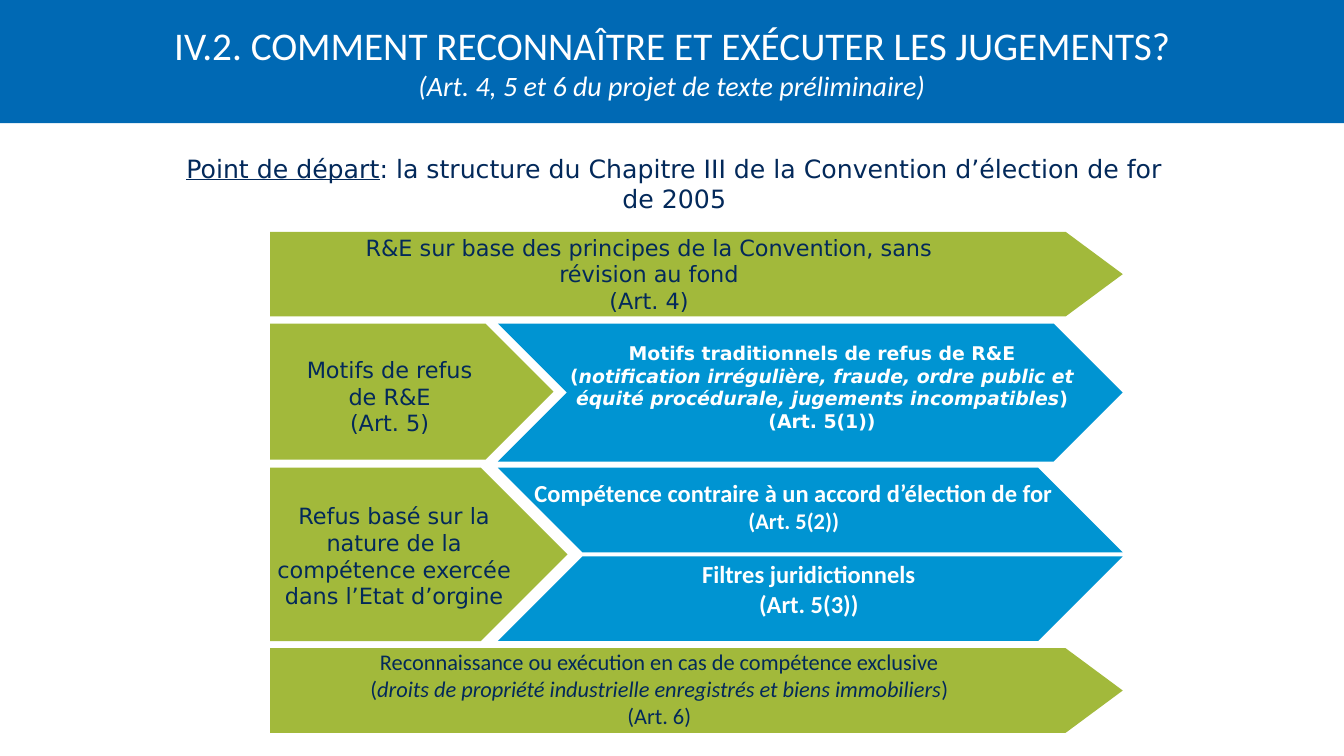
from pptx import Presentation
from pptx.dml.color import RGBColor
from pptx.enum.shapes import MSO_SHAPE
from pptx.enum.text import MSO_ANCHOR, MSO_AUTO_SIZE, PP_ALIGN
from pptx.util import Pt

PENTAGON = MSO_SHAPE.PENTAGON
CHEVRON = MSO_SHAPE.CHEVRON
PARALLELOGRAM = MSO_SHAPE.PARALLELOGRAM
MIDDLE = MSO_ANCHOR.MIDDLE
CENTER = PP_ALIGN.CENTER
GROW = MSO_AUTO_SIZE.SHAPE_TO_FIT_TEXT
FIXED = MSO_AUTO_SIZE.NONE

SANS, CALIBRI = "DejaVu Sans", "Calibri"
NAVY, WHITE = "03295A", "FFFFFF"
GREEN, SKY, BANNER = "A2B93B", "0094D2", "0069B4"
WIDTH, HEIGHT = 960, 540
LEFT, RIGHT, INNER = 193, 802, 355.7
FULL, BRANCH = RIGHT - LEFT, RIGHT - INNER
BAR = 60.5
ROWS = (165.6, 231.1, 334.1, 463)


def color(value):
    """Turn a hex string into a colour."""
    return RGBColor.from_string(value)


class SlideBuilder:
    """Holds the style and the current slide."""

    def __init__(self, deck):
        """Add a title-only page to the deck."""
        self.page = deck.slides.add_slide(deck.slide_layouts[5])

    def add_lines(self, frame, lines, font, ink, size, bold=False):
        """Set centred lines, each a list of (text, style) runs."""
        frame.word_wrap = True
        for index, line in enumerate(lines):
            para = frame.add_paragraph() if index else frame.paragraphs[0]
            para.alignment = CENTER
            for text, style in line:
                span = para.add_run()
                span.text = text
                span.font.name = font
                span.font.size = Pt(style.get("size", size))
                span.font.bold = bold
                span.font.italic = style.get("italic", False)
                span.font.underline = style.get("underline", False)
                span.font.color.rgb = color(ink)

    def title(self, height, lines):
        """Format the title placeholder as a full-width banner."""
        box = self.page.shapes.title
        box.left, box.top, box.width, box.height = Pt(0), Pt(0), Pt(WIDTH), Pt(height)
        box.fill.solid()
        box.fill.fore_color.rgb = color(BANNER)
        box.text_frame.auto_size = FIXED
        box.text_frame.vertical_anchor = MIDDLE
        self.add_lines(box.text_frame, lines, CALIBRI, WHITE, 28)

    def arrow(self, kind, left, top, width, height, fill, point=0.5, flip=False):
        """Draw a plain filled block, optionally mirrored."""
        shape = self.page.shapes.add_shape(kind, Pt(left), Pt(top), Pt(width), Pt(height))
        shape.shadow.inherit = False
        shape.fill.solid()
        shape.fill.fore_color.rgb = color(fill)
        shape.line.fill.background()
        shape.adjustments[0] = point
        if flip:
            shape.element.spPr.xfrm.set("flipH", "1")

    def label(self, left, top, width, height, lines, font, ink, size, bold=False):
        """Place a text box."""
        box = self.page.shapes.add_textbox(Pt(left), Pt(top), Pt(width), Pt(height))
        self.add_lines(box.text_frame, lines, font, ink, size, bold)
        box.text_frame.auto_size = GROW


def main():
    """Build and save the slide."""
    deck = Presentation()
    deck.slide_width, deck.slide_height = Pt(WIDTH), Pt(HEIGHT)
    slide = SlideBuilder(deck)
    plain, italic = {}, {"italic": True}

    slide.title(88, [
        [("IV.2. COMMENT RECONNAÎTRE ET EXÉCUTER LES JUGEMENTS?", plain)],
        [("(Art. 4, 5 et 6 du projet de texte préliminaire)", {"size": 20, "italic": True})],
    ])

    for top in (ROWS[0], ROWS[3]):
        slide.arrow(PENTAGON, LEFT, top, FULL, BAR, GREEN, 0.675)
    slide.arrow(PENTAGON, LEFT, ROWS[1], 202.3, 97.2, GREEN)
    slide.arrow(PENTAGON, LEFT, ROWS[2], 212.4, 123.8, GREEN)
    slide.arrow(CHEVRON, INNER, ROWS[1], BRANCH, 98.6, SKY)
    for top, flip in ((ROWS[2], True), (ROWS[2] + 63.3, False)):
        slide.arrow(PARALLELOGRAM, INNER, top, BRANCH, BAR, SKY, 1, flip)

    slide.label(121.7, 105.8, 720, 51, [
        [("Point de départ", {"underline": True}),
         (": la structure du Chapitre III de la Convention d’élection de for de 2005", plain)],
    ], SANS, NAVY, 18)
    slide.label(224.6, 163.4, 478, 65.5, [
        [("R&E sur base des principes de la Convention, sans révision au fond", plain)],
        [("(Art. 4)", plain)],
    ], SANS, NAVY, 16)
    slide.label(203.8, 250.6, 149, 65.5, [
        [("Motifs de refus de R&E", plain)],
        [("(Art. 5)", plain)],
    ], SANS, NAVY, 16)
    slide.label(182.2, 355, 198.7, 85, [
        [("Refus basé sur la nature de la compétence exercée dans l’Etat d’orgine", plain)],
    ], SANS, NAVY, 16)
    slide.label(388.8, 240.5, 396.7, 72.7, [
        [("Motifs traditionnels de refus de R&E", plain)],
        [("(", plain),
         ("notification irrégulière, fraude, ordre public et équité procédurale, "
          "jugements incompatibles", italic),
         (")", plain)],
        [("(Art. 5(1))", plain)],
    ], SANS, WHITE, 13.5, True)
    slide.label(368.6, 337.7, 396.7, 47.5, [
        [("Compétence contraire à un accord d’élection de for", plain)],
        [("(Art. 5(2))", {"size": 16})],
    ], CALIBRI, WHITE, 17.5, True)
    slide.label(379.4, 396, 396.7, 51, [
        [("Filtres juridictionnels", plain)],
        [("(Art. 5(3))", plain)],
    ], CALIBRI, WHITE, 17.5, True)
    slide.label(185.8, 459.4, 570.2, 65.5, [
        [("Reconnaissance ou exécution en cas de compétence exclusive", plain)],
        [("(", plain),
         ("droits de propriété industrielle enregistrés et biens immobiliers", italic),
         (")", plain)],
        [("(Art. 6)", plain)],
    ], CALIBRI, NAVY, 16)

    deck.save("out.pptx")


if __name__ == "__main__":
    main()
